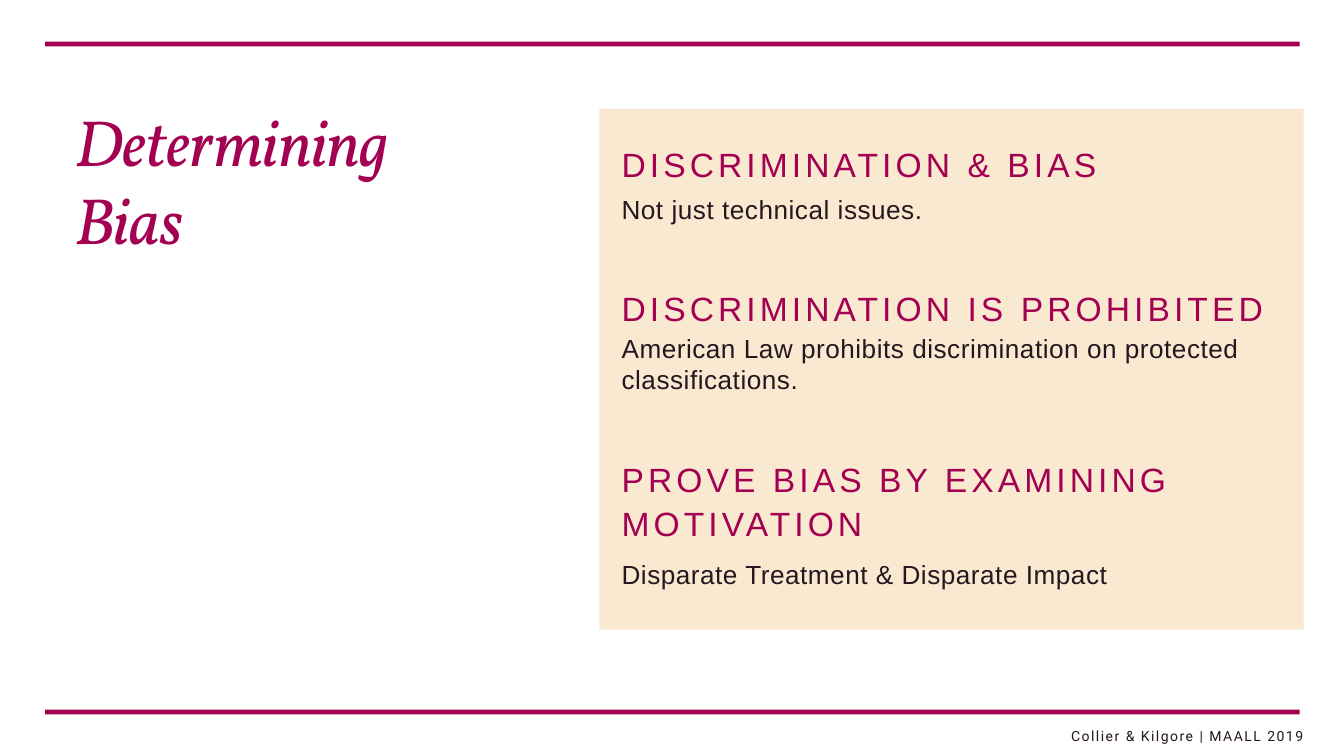
from dataclasses import dataclass

from pptx import Presentation
from pptx.dml.color import RGBColor
from pptx.enum.shapes import MSO_SHAPE
from pptx.enum.text import MSO_ANCHOR, MSO_AUTO_SIZE, PP_ALIGN
from pptx.util import Inches, Pt

RECT = MSO_SHAPE.RECTANGLE
TOP = MSO_ANCHOR.TOP
FIXED = MSO_AUTO_SIZE.NONE
LEFT, RIGHT = PP_ALIGN.LEFT, PP_ALIGN.RIGHT
TITLE_ONLY = 5


@dataclass(frozen=True)
class Style:
    """Type style: size, line and gap (letter spacing) are in points."""
    name: str
    size: float
    color: RGBColor
    line: float
    gap: float
    italic: bool = False
    align: PP_ALIGN = LEFT


class Theme:
    wine = RGBColor.from_string("A30052")
    cream = RGBColor.from_string("F9E9D0")
    ink = RGBColor.from_string("26161F")
    title = Style("Vollkorn", 70, wine, 84, -0.7, italic=True)
    head = Style("Arial", 36, wine, 47.1, 4.4)
    note = Style("Arial", 28, ink, 33.1, 0.6)
    foot = Style("Roboto", 15, ink, 21.8, 1.6, align=RIGHT)


# Heading, its top and height, then note, its top and height;
# tops are measured from the top of the panel.
TOPICS = [
    ("DISCRIMINATION & BIAS", 0.47, 0.75,
     "Not just technical issues.", 1.26, 0.56),
    ("DISCRIMINATION IS PROHIBITED", 2.61, 0.75,
     "American Law prohibits discrimination on protected classifications.",
     3.34, 1.12),
    ("PROVE BIAS BY EXAMINING MOTIVATION", 5.15, 1.55,
     "Disparate Treatment & Disparate Impact", 6.69, 0.56),
]


def apply(item, values):
    for key, value in values.items():
        setattr(item, key, value)


def place(shape, box):
    names = ("left", "top", "width", "height")
    apply(shape, dict(zip(names, map(Inches, box))))


def write(frame, lines, style):
    apply(frame, dict(word_wrap=True, auto_size=FIXED, vertical_anchor=TOP,
                      margin_left=0, margin_top=0,
                      margin_right=0, margin_bottom=0))
    for i, line in enumerate(lines):
        para = frame.add_paragraph() if i else frame.paragraphs[0]
        apply(para, dict(alignment=style.align, line_spacing=Pt(style.line),
                         space_before=Pt(0), space_after=Pt(0)))
        run = para.add_run()
        run.text = line
        apply(run.font, dict(name=style.name, size=Pt(style.size),
                             italic=style.italic))
        run.font.color.rgb = style.color
        run.font._element.set("spc", str(round(style.gap * 100)))


def add_text(slide, box, line, style):
    frame = slide.shapes.add_textbox(*map(Inches, box)).text_frame
    write(frame, [line], style)


def add_block(slide, box, color):
    block = slide.shapes.add_shape(RECT, *map(Inches, box))
    block.shadow.inherit = False
    block.fill.solid()
    block.fill.fore_color.rgb = color
    block.line.fill.background()


def add_rules(slide, box):
    """Draw a bar along the top and the bottom edge of the box."""
    x, y, w, h = box
    thick = 0.07
    for top in (y, y + h - thick):
        add_block(slide, (x, top, w, thick), Theme.wine)


def add_title(slide, box, lines):
    title = slide.shapes.title
    place(title, box)
    write(title.text_frame, lines, Theme.title)


def add_panel(slide, box, topics):
    x, y, w, h = box
    add_block(slide, box, Theme.cream)
    left, width = x + 0.33, w - 0.83
    for head, head_top, head_h, note, note_top, note_h in topics:
        add_text(slide, (left, y + head_top, width, head_h), head, Theme.head)
        add_text(slide, (left, y + note_top, width, note_h), note, Theme.note)


def main():
    deck = Presentation()
    apply(deck, dict(slide_width=Inches(20), slide_height=Inches(11.25)))
    slide = deck.slides.add_slide(deck.slide_layouts[TITLE_ONLY])
    add_rules(slide, (0.67, 0.62, 18.67, 10.01))
    add_title(slide, (1.12, 1.5, 7.5, 2.31), ["Determining", "Bias"])
    add_panel(slide, (8.92, 1.62, 10.48, 7.75), TOPICS)
    add_text(slide, (0.6, 10.78, 18.8, 0.28),
             "Collier & Kilgore | MAALL 2019", Theme.foot)
    deck.save("out.pptx")


if __name__ == "__main__":
    main()
